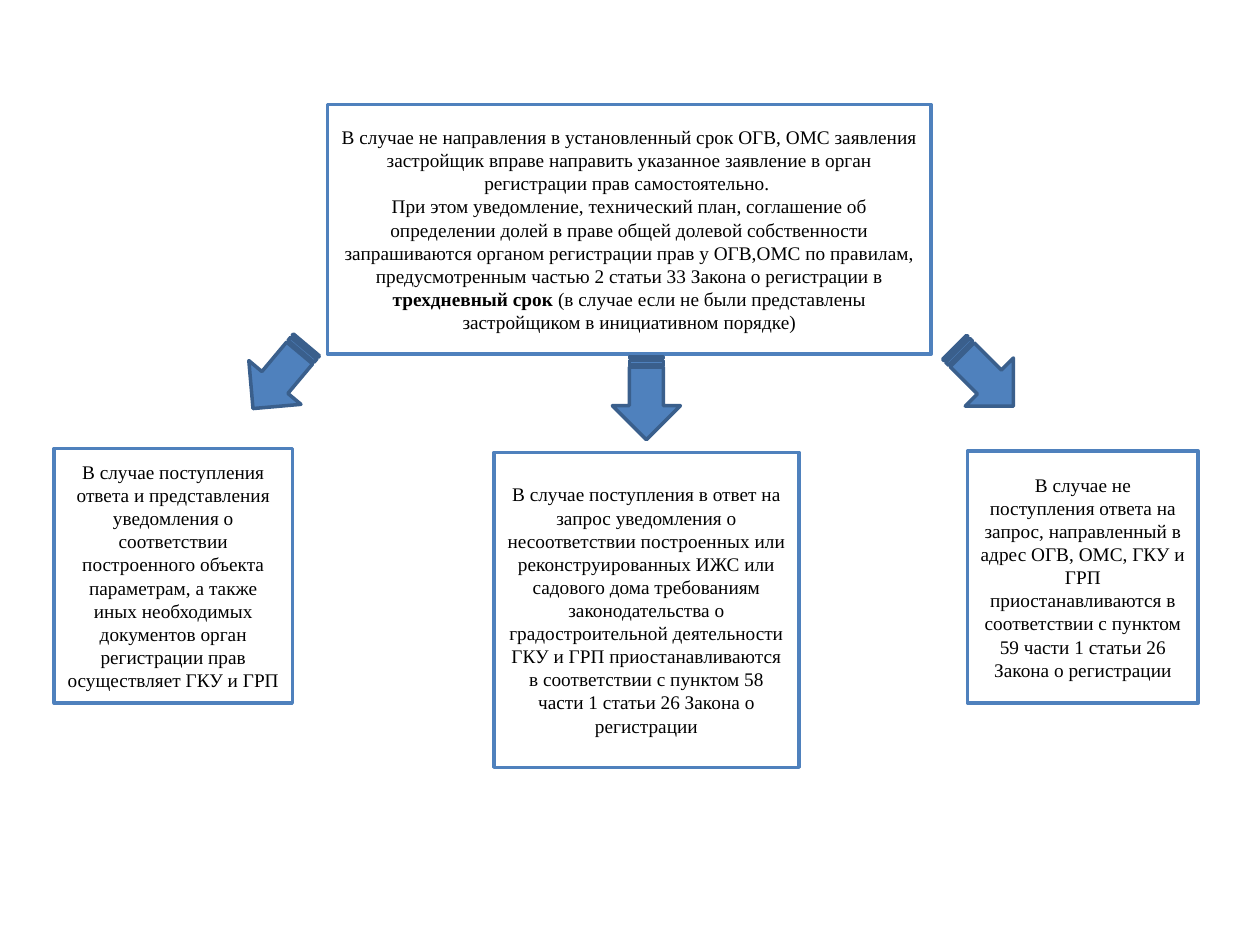
from pptx import Presentation
from pptx import util as u
from pptx.dml.color import RGBColor
from pptx.enum import shapes, text

COLORS = {"paper": "FFFFFF", "ink": "000000", "blue": "4F81BD", "edge": "3A5F8C"}


class Flow:
    font = "Times New Roman"
    size = 11
    border = 2

    def __init__(self, slide):
        self.slide = slide

    def color(self, name):
        return RGBColor.from_string(COLORS[name])

    def shape(self, kind, place, fill, line):
        item = self.slide.shapes.add_shape(kind, *(u.Inches(v) for v in place))
        item.shadow.inherit = False
        item.fill.solid()
        item.fill.fore_color.rgb = self.color(fill)
        item.line.color.rgb = self.color(line)
        item.line.width = u.Pt(self.border)
        return item

    def box(self, place, paragraphs):
        item = self.shape(shapes.MSO_SHAPE.RECTANGLE, place, "paper", "blue")
        frame = item.text_frame
        frame.word_wrap = True
        frame.vertical_anchor = text.MSO_ANCHOR.MIDDLE
        for index, parts in enumerate(paragraphs):
            paragraph = frame.add_paragraph() if index else frame.paragraphs[0]
            paragraph.alignment = text.PP_ALIGN.CENTER
            for wording, bold in parts:
                run = paragraph.add_run()
                run.text = wording
                run.font.name = self.font
                run.font.size = u.Pt(self.size)
                run.font.bold = bold
                run.font.color.rgb = self.color("ink")

    def arrow(self, left, top, angle):
        kind = shapes.MSO_SHAPE.STRIPED_RIGHT_ARROW
        item = self.shape(kind, (left, top, 0.66, 0.54), "blue", "edge")
        item.rotation = angle


CONDITION = [
    [("В случае не направления в установленный срок ОГВ, ОМС заявления застройщик "
      "вправе направить указанное заявление в орган регистрации прав самостоятельно. ", False)],
    [("При этом уведомление, технический план, соглашение об определении долей в праве "
      "общей долевой собственности запрашиваются органом регистрации прав у ОГВ,ОМС по "
      "правилам, предусмотренным частью 2 статьи 33 Закона о регистрации в ", False),
     ("трехдневный срок ", True),
     ("(в случае если не были представлены застройщиком в инициативном порядке)", False)],
]

OUTCOMES = [
    ((0.43, 3.56, 1.89, 2.02),
     "В случае поступления ответа и представления уведомления о соответствии "
     "построенного объекта параметрам, а также иных необходимых документов орган "
     "регистрации прав осуществляет ГКУ и ГРП"),
    ((3.92, 3.59, 2.42, 2.5),
     "В случае поступления в ответ на запрос уведомления о несоответствии построенных "
     "или реконструированных ИЖС или садового дома требованиям законодательства о "
     "градостроительной деятельности ГКУ и ГРП приостанавливаются в соответствии с "
     "пунктом 58 части 1 статьи 26 Закона о регистрации"),
    ((7.68, 3.58, 1.83, 2),
     "В случае не поступления ответа на запрос, направленный в адрес ОГВ, ОМС, ГКУ и ГРП "
     "приостанавливаются в соответствии с пунктом 59 части 1 статьи 26 Закона о регистрации"),
]

ARROWS = [(1.89, 2.72, 130), (4.8, 2.89, 90), (7.48, 2.72, 45)]


def main():
    deck = Presentation()
    deck.slide_width, deck.slide_height = u.Inches(10), u.Inches(7.5)
    flow = Flow(deck.slides.add_slide(deck.slide_layouts[6]))
    flow.box((2.6, 0.83, 4.79, 1.98), CONDITION)
    for place, wording in OUTCOMES:
        flow.box(place, [[(wording, False)]])
    for left, top, angle in ARROWS:
        flow.arrow(left, top, angle)
    deck.save("out.pptx")


if __name__ == "__main__":
    main()
